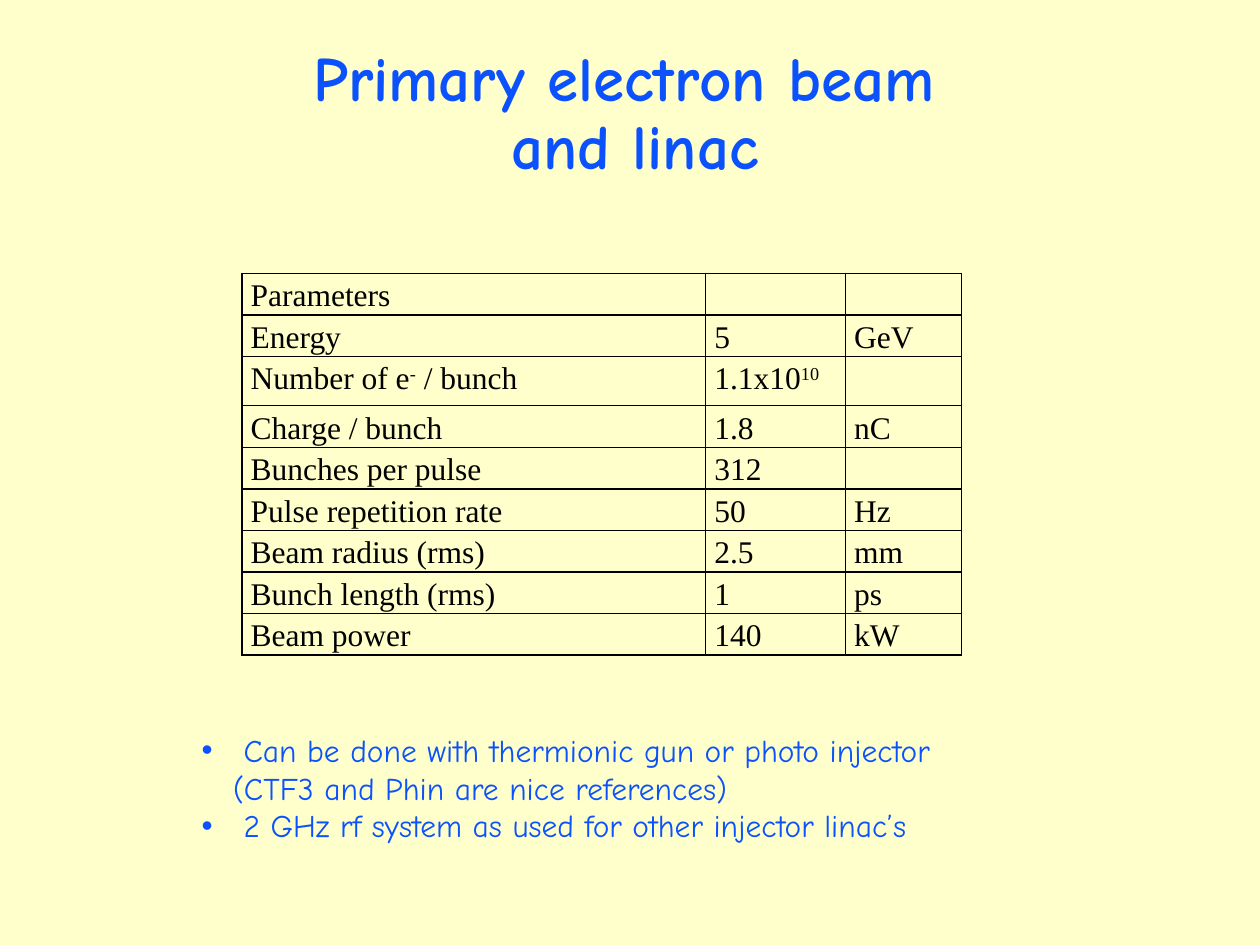
"""Build the slide on the primary electron beam and linac."""
from lxml import etree
from pptx import Presentation
from pptx import util as u
from pptx.dml.color import RGBColor
from pptx.enum import text
from pptx.oxml.ns import qn

TITLE = "Primary electron beam \vand linac"
ROWS = [
    ("Parameters", "", ""),
    ("Energy", "5", "GeV"),
    ("Number of e^-^ / bunch", "1.1x10^10", ""),
    ("Charge / bunch", "1.8", "nC"),
    ("Bunches per pulse", "312", ""),
    ("Pulse repetition rate", "50", "Hz"),
    ("Beam radius (rms)", "2.5", "mm"),
    ("Bunch length (rms)", "1", "ps"),
    ("Beam power", "140", "kW"),
]
NOTES = [
    " Can be done with thermionic gun or photo injector (CTF3 and Phin are nice references)",
    " 2 GHz rf system as used for other injector linac’s",
]
WIDTHS = (3.68, 1.11, 0.92)
ROW, TALL = 0.33, 0.39

CREAM = RGBColor(0xFF, 0xFF, 0xCC)
BLUE = RGBColor(0x0B, 0x52, 0xFC)
BLACK = RGBColor(0, 0, 0)
HEAD = {"name": "Comic Neue", "size": u.Pt(36), "bold": True}
LIST = {"name": "Comic Neue", "size": u.Pt(18), "bold": False}
CELL = {"name": "Times New Roman", "size": u.Pt(18), "bold": False}


def style(item, form):
    for key, val in form.items():
        setattr(item, key, val)


def write(para, words, form, color):
    for n, part in enumerate(words.split("^")):
        run = para.add_run()
        run.text = part
        style(run.font, form)
        run.font.color.rgb = color
        if n % 2:
            run.font._element.set("baseline", "30000")


def place(shape, *box):
    style(shape, dict(zip(("left", "top", "width", "height"), map(u.Inches, box))))


def border(cell):
    props = cell._tc.get_or_add_tcPr()
    for side in ("lnL", "lnR", "lnT", "lnB"):
        line = etree.SubElement(props, qn(f"a:{side}"), w=str(u.Pt(1)))
        fill = etree.SubElement(line, qn("a:solidFill"))
        etree.SubElement(fill, qn("a:srgbClr"), val=str(BLACK))


def add_title(slide):
    title = slide.shapes.title
    place(title, 1.58, 0.5, 6.92, 0.83)
    style(title.text_frame, {"vertical_anchor": text.MSO_ANCHOR.MIDDLE,
                             "auto_size": text.MSO_AUTO_SIZE.NONE})
    para = title.text_frame.paragraphs[0]
    para.text = TITLE
    style(para, {"alignment": text.PP_ALIGN.CENTER, "line_spacing": 0.9})
    for run in para.runs:
        style(run.font, HEAD)
        run.font.color.rgb = BLUE


def add_grid(slide):
    high = [TALL if "^" in row[0] else ROW for row in ROWS]
    box = map(u.Inches, (1.92, 2.17, sum(WIDTHS), sum(high)))
    grid = slide.shapes.add_table(len(ROWS), len(WIDTHS), *box).table
    style(grid, {"first_row": False, "horz_banding": False})
    for col, wide in zip(grid.columns, WIDTHS):
        col.width = u.Inches(wide)
    for line, size, row in zip(grid.rows, high, ROWS):
        line.height = u.Inches(size)
        for cell, words in zip(line.cells, row):
            style(cell, {"margin_left": u.Inches(0.07), "margin_right": u.Inches(0.07),
                         "margin_top": 0, "margin_bottom": 0})
            border(cell)
            cell.fill.background()
            para = cell.text_frame.paragraphs[0]
            style(para, {"alignment": text.PP_ALIGN.JUSTIFY, "line_spacing": 1.15})
            if words:
                write(para, words, CELL, BLACK)


def add_list(slide):
    body = slide.placeholders[1]
    place(body, 1.5, 5.75, 6.25, 1.01)
    frame = body.text_frame
    style(frame, {"word_wrap": True, "auto_size": text.MSO_AUTO_SIZE.NONE,
                  "vertical_anchor": text.MSO_ANCHOR.TOP})
    for n, words in enumerate(NOTES):
        para = frame.add_paragraph() if n else frame.paragraphs[0]
        props = para._p.get_or_add_pPr()
        style(para, {"space_before": u.Pt(0), "line_spacing": 1.0})
        props.set("marL", str(u.Inches(0.25)))
        props.set("indent", str(u.Inches(-0.25)))
        etree.SubElement(props, qn("a:buFont"), typeface="Arial")
        etree.SubElement(props, qn("a:buChar"), char="•")
        write(para, words, LIST, BLUE)


def main():
    deck = Presentation()
    style(deck, {"slide_width": u.Inches(10), "slide_height": u.Inches(7.5)})
    slide = deck.slides.add_slide(deck.slide_layouts[1])
    back = slide.background.fill
    back.solid()
    back.fore_color.rgb = CREAM
    add_title(slide)
    add_grid(slide)
    add_list(slide)
    deck.save("out.pptx")


if __name__ == "__main__":
    main()
